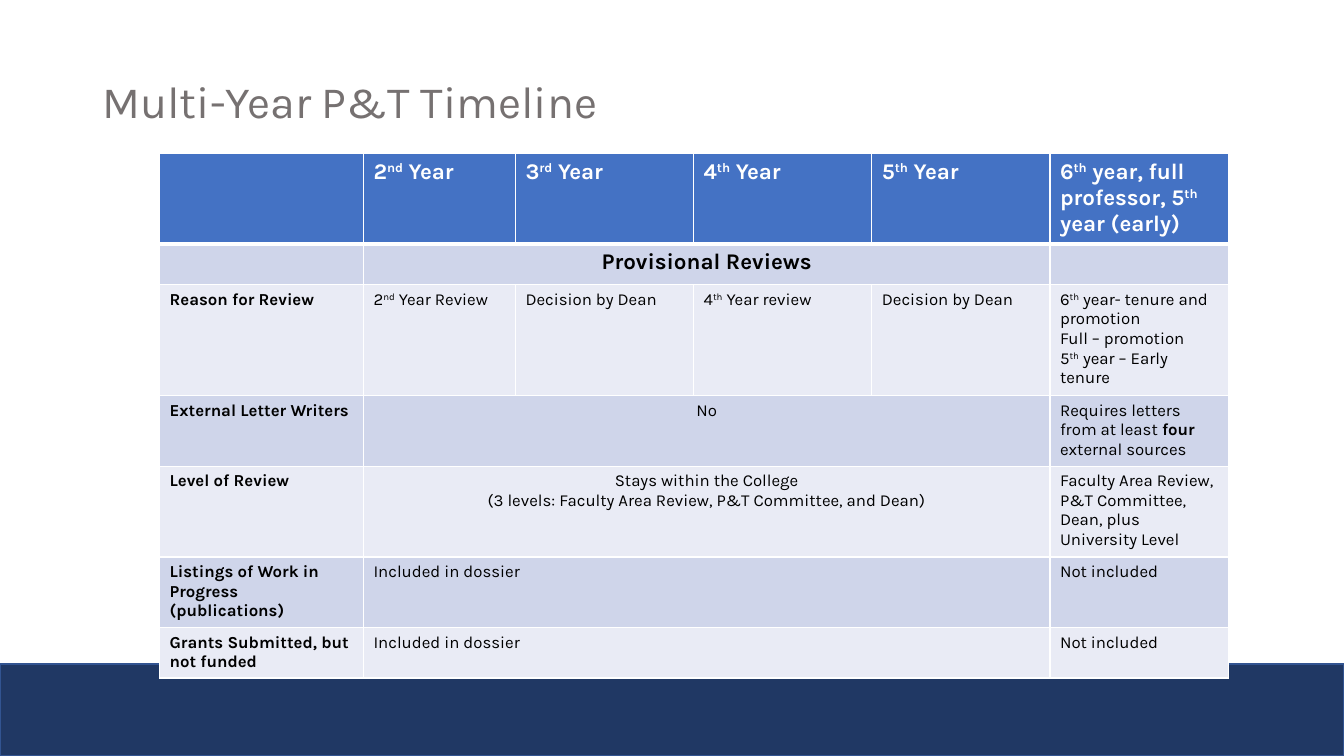
"""Build the multi-year P&T timeline slide."""
from lxml import etree
from pptx import Presentation
from pptx.dml.color import RGBColor
from pptx.enum.shapes import MSO_SHAPE
from pptx.enum.text import MSO_ANCHOR, PP_ALIGN
from pptx.oxml.ns import qn
from pptx.util import Cm, Pt

RECT = MSO_SHAPE.RECTANGLE
MIDDLE = MSO_ANCHOR.MIDDLE
LEFT, CENTER = PP_ALIGN.LEFT, PP_ALIGN.CENTER

FONT = "Karla"
COLORS = {
    "title": "767171", "bar": "203864", "edge": "325491",
    "head": "4472C4", "dark": "CFD5EA", "light": "E9EBF5",
    "white": "FFFFFF", "black": "000000",
}
TITLE = "Multi-Year P&T Timeline"
# ^x^ marks a superscript, *x* marks bold
HEAD = ["", "2^nd^ Year", "3^rd^ Year", "4^th^ Year", "5^th^ Year",
        "6^th^ year, full professor, 5^th^ year (early)"]
BODY = [
    ["", "Provisional Reviews", ""],
    ["Reason for Review", "2^nd^ Year Review", "Decision by Dean",
     "4^th^ Year review", "Decision by Dean",
     "6^th^ year- tenure and promotion\nFull – promotion\n5^th^ year – Early tenure"],
    ["External Letter Writers", "No",
     "Requires letters from at least *four* external sources"],
    ["Level of Review",
     "Stays within the College\n"
     "(3 levels: Faculty Area Review, P&T Committee, and Dean)",
     "Faculty Area Review, P&T Committee, Dean, plus University Level"],
    ["Listings of Work in Progress (publications)", "Included in dossier", "Not included"],
    ["Grants Submitted, but not funded", "Included in dossier", "Not included"],
]
WIDTHS = [5.14, 3.83] + [4.49] * 4
HEIGHTS = [2.13, 0.86, 2.13, 1.65, 2.13, 1.4, 1.19]
CENTERED = (1, 3, 4)


def color(name):
    """Return the named colour."""
    return RGBColor.from_string(COLORS[name])


def write(frame, text, size=12, ink="black", bold=False, align=LEFT, space=None):
    """Fill a text frame from lightly marked text."""
    for i, line in enumerate(text.split("\n")):
        para = frame.add_paragraph() if i else frame.paragraphs[0]
        para.alignment, para.line_spacing = align, space
        if not line:
            end = etree.SubElement(para._p, qn("a:endParaRPr"), sz="1800")
            etree.SubElement(end, qn("a:latin"), typeface=FONT)
        for j, chunk in enumerate(line.split("^")):
            for k, part in enumerate(chunk.split("*")):
                if not part:
                    continue
                run = para.add_run()
                run.text = part
                font = run.font
                font.name, font.size = FONT, Pt(size)
                font.bold = bold or k % 2 == 1
                font.color.rgb = color(ink)
                if j % 2:
                    run._r.get_or_add_rPr().set("baseline", "30000")


def border(cell, top, bottom):
    """Draw white cell borders."""
    props = cell._tc.get_or_add_tcPr()
    for side, width in zip("LRTB", (1, 1, top, bottom)):
        line = etree.SubElement(props, qn("a:ln" + side), w=str(Pt(width)))
        fill = etree.SubElement(line, qn("a:solidFill"))
        etree.SubElement(fill, qn("a:srgbClr"), val=COLORS["white"])


def build():
    """Build and save the slide."""
    deck = Presentation()
    deck.slide_width, deck.slide_height = Cm(33.87), Cm(19.05)
    slide = deck.slides.add_slide(deck.slide_layouts[6])
    shapes = slide.shapes

    bar = shapes.add_shape(RECT, 0, Cm(16.73), deck.slide_width, Cm(2.32))
    bar.shadow.inherit = False
    bar.fill.solid()
    bar.fill.fore_color.rgb = color("bar")
    bar.line.color.rgb = color("edge")
    bar.line.width = Pt(1)

    title = shapes.add_textbox(Cm(2.33), Cm(1.75), Cm(29.21), Cm(1.73)).text_frame
    title.word_wrap = True
    title.vertical_anchor = MIDDLE
    write(title, TITLE, size=32, ink="title", space=0.9)

    rows = [HEAD] + BODY
    table = shapes.add_table(len(rows), len(WIDTHS), Cm(4.02), Cm(3.87),
                             Cm(sum(WIDTHS)), Cm(sum(HEIGHTS))).table
    for col, width in zip(table.columns, WIDTHS):
        col.width = Cm(width)
    for r, texts in enumerate(rows):
        table.rows[r].height = Cm(HEIGHTS[r])
        shade = "head" if r == 0 else "dark" if r % 2 else "light"
        for c in range(len(WIDTHS)):
            cell = table.cell(r, c)
            border(cell, 3 if r == 1 else 1, 3 if r == 0 else 1)
            cell.fill.solid()
            cell.fill.fore_color.rgb = color(shade)
        spots = range(len(WIDTHS))
        if len(texts) == 3:
            table.cell(r, 1).merge(table.cell(r, 4))
            spots = (0, 1, 5)
        for c, text in zip(spots, texts):
            write(table.cell(r, c).text_frame, text,
                  size=16 if r < 2 else 12,
                  ink="white" if r == 0 else "black",
                  bold=r < 2 or c == 0,
                  align=CENTER if c == 1 and r in CENTERED else LEFT)
    deck.save("out.pptx")


if __name__ == "__main__":
    build()
